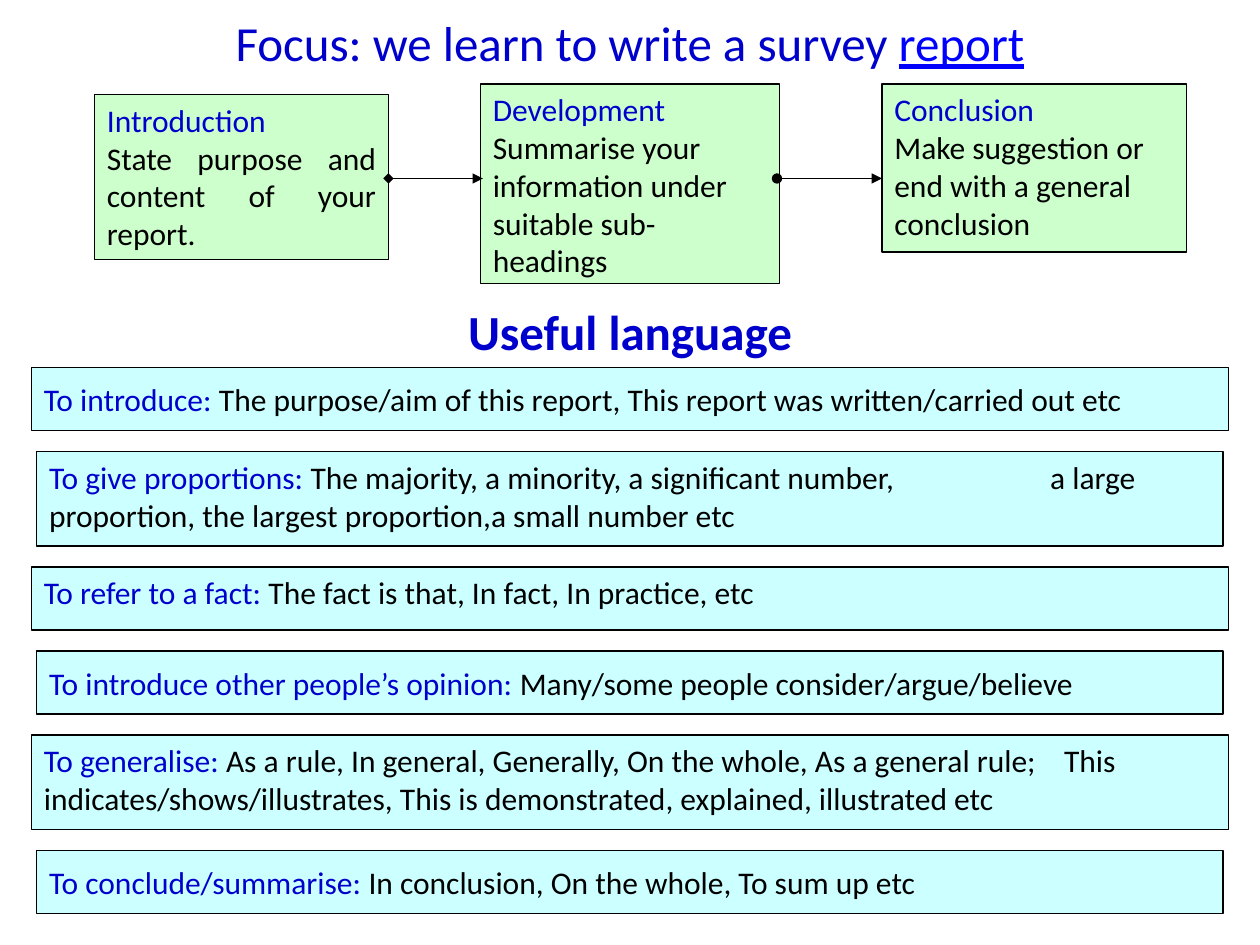
from lxml.etree import SubElement
from pptx import Presentation
from pptx.dml.color import RGBColor
from pptx.enum.shapes import MSO_CONNECTOR as Connector, MSO_SHAPE as Shape
from pptx.enum.text import MSO_ANCHOR as Anchor, MSO_AUTO_SIZE as AutoSize, PP_ALIGN as Align
from pptx.oxml.ns import qn
from pptx.util import Pt

THEME = {
    "font": "Calibri", "heading_size": 28, "text_size": 18, "line": 0.75,
    "accent": RGBColor(0x00, 0x00, 0xCC), "link": RGBColor(0x00, 0x00, 0xFF),
    "ink": RGBColor(0x00, 0x00, 0x00),
    "stage": RGBColor(0xCC, 0xFF, 0xCC), "phrase": RGBColor(0xCC, 0xFF, 0xFF),
}

TITLE, LINKED_WORD = "Focus: we learn to write a survey ", "report"
SUBTITLE = "Useful language"

# heading, text, (left, top, width, height), alignment
STAGES = [
    ("Introduction", "State purpose and content of your report.",
     (54, 54, 168, 94.3), Align.JUSTIFY),
    ("Development", "Summarise your information under suitable sub-headings",
     (274.5, 48, 171, 114), Align.LEFT),
    ("Conclusion", "Make suggestion or end with a general conclusion",
     (504, 48, 174, 96), Align.LEFT),
]

# start, end, arrowhead at the start
ARROWS = [(222, 276, "diamond"), (444, 504, "oval")]
ARROW_Y = 102

# label, text, height, anchor, tab stop
PHRASES = [
    ("To introduce: ",
     "The purpose/aim of this report, This report was written/carried out etc",
     36, Anchor.MIDDLE, None),
    ("To give proportions: ",
     "The majority, a minority, a significant number,\ta large proportion, "
     "the largest proportion,a small number etc", 54, Anchor.TOP, 572),
    ("To refer to a fact: ", "The fact is that, In fact, In practice, etc",
     36, Anchor.TOP, None),
    ("To introduce other people’s opinion: ",
     "Many/some people consider/argue/believe", 36, Anchor.MIDDLE, None),
    ("To generalise: ",
     "As a rule, In general, Generally, On the whole, As a general rule;\tThis "
     "indicates/shows/illustrates, This is demonstrated, explained, illustrated etc",
     54, Anchor.TOP, 583),
    ("To conclude/summarise: ", "In conclusion, On the whole, To sum up etc",
     36, Anchor.MIDDLE, None),
]
PHRASES_TOP, PHRASE_GAP = 210, 12
PHRASE_SIDES = [(18, 684), (21, 678)]  # left and width, alternating


def set_font(para, size, color=None):
    para.font.name = THEME["font"]
    para.font.size = Pt(size)
    if color is not None:
        para.font.color.rgb = color


def add_span(para, text, color):
    span = para.add_run()
    span.text = text
    span.font.color.rgb = color
    return span


def add_panel(page, place, fill, anchor):
    panel = page.shapes.add_shape(Shape.RECTANGLE, *map(Pt, place))
    panel.shadow.inherit = False
    panel.fill.solid()
    panel.fill.fore_color.rgb = fill
    panel.line.color.rgb = THEME["ink"]
    panel.line.width = Pt(THEME["line"])
    panel.text_frame.word_wrap = True
    panel.text_frame.vertical_anchor = anchor
    return panel.text_frame


def add_stage(page, heading, text, place, align):
    frame = add_panel(page, place, THEME["stage"], Anchor.TOP)
    lines = [(heading, THEME["accent"]), (text, THEME["ink"])]
    for para, (line, color) in zip([frame.paragraphs[0], frame.add_paragraph()], lines):
        para.text = line
        para.alignment = align
        set_font(para, THEME["text_size"], color)


def add_arrow(page, start, end, head):
    arrow = page.shapes.add_connector(
        Connector.STRAIGHT, Pt(start), Pt(ARROW_Y), Pt(end), Pt(ARROW_Y))
    arrow.line.color.rgb = THEME["ink"]
    arrow.line.width = Pt(THEME["line"])
    outline = arrow.line._get_or_add_ln()
    SubElement(outline, qn("a:headEnd"), type=head)
    SubElement(outline, qn("a:tailEnd"), type="triangle")
    SubElement(arrow._element.spPr, qn("a:effectLst"))


def add_phrase(page, label, text, place, anchor, tab_stop):
    para = add_panel(page, place, THEME["phrase"], anchor).paragraphs[0]
    para.alignment = Align.LEFT
    if tab_stop:
        tabs = SubElement(para._p.get_or_add_pPr(), qn("a:tabLst"))
        SubElement(tabs, qn("a:tab"), pos=str(Pt(tab_stop)), algn="l")
    set_font(para, THEME["text_size"])
    add_span(para, label, THEME["accent"])
    add_span(para, text, THEME["ink"])


def add_headings(page):
    title = page.shapes.title
    title.left, title.top, title.width, title.height = map(Pt, (36, 0, 648, 48))
    title.text_frame.auto_size = AutoSize.NONE
    title.text_frame.vertical_anchor = Anchor.MIDDLE
    para = title.text_frame.paragraphs[0]
    para.alignment = Align.CENTER
    set_font(para, THEME["heading_size"])
    add_span(para, TITLE, THEME["accent"])
    add_span(para, LINKED_WORD, THEME["link"]).font.underline = True

    subtitle = page.shapes.add_textbox(*map(Pt, (36, 169, 648, 41)))
    subtitle.text_frame.word_wrap = True
    para = subtitle.text_frame.paragraphs[0]
    para.text = SUBTITLE
    para.alignment = Align.CENTER
    set_font(para, THEME["heading_size"], THEME["accent"])
    para.font.bold = True


def main():
    deck = Presentation()
    deck.slide_width, deck.slide_height = Pt(720), Pt(540)
    page = deck.slides.add_slide(deck.slide_layouts[5])
    add_headings(page)
    for stage in STAGES:
        add_stage(page, *stage)
    for arrow in ARROWS:
        add_arrow(page, *arrow)
    top = PHRASES_TOP
    for index, (label, text, height, anchor, tab_stop) in enumerate(PHRASES):
        left, width = PHRASE_SIDES[index % 2]
        add_phrase(page, label, text, (left, top, width, height), anchor, tab_stop)
        top += height + PHRASE_GAP
    deck.save("out.pptx")


if __name__ == "__main__":
    main()
